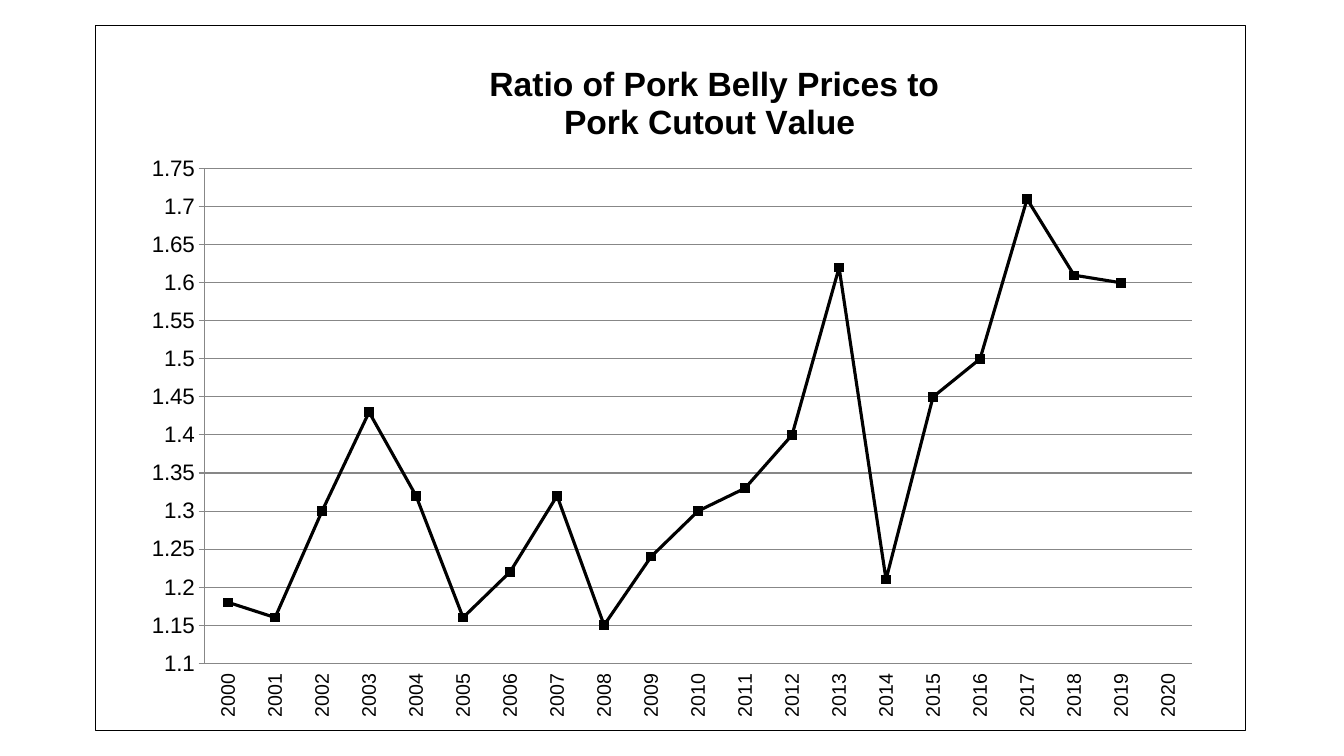
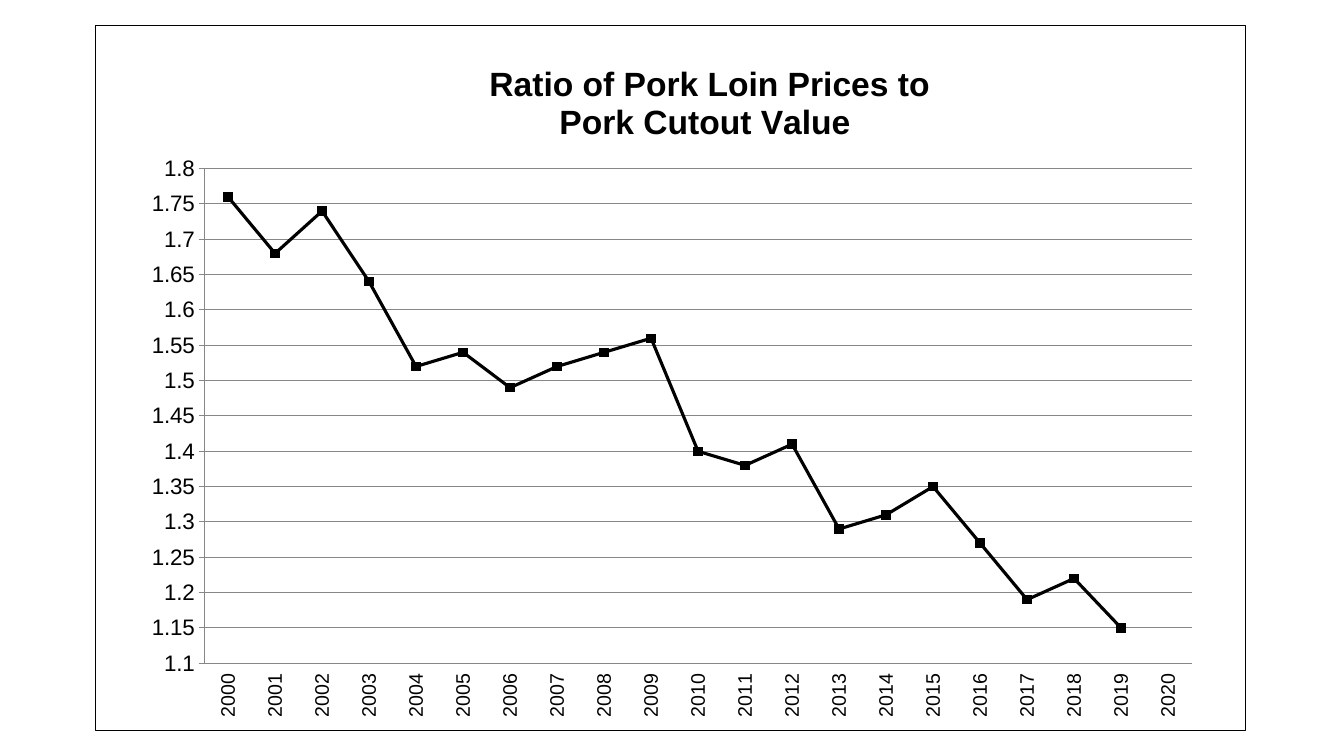
import pptx
import pptx.chart.data
import pptx.dml.color
import pptx.enum.chart
import pptx.oxml
import pptx.oxml.ns
import pptx.util

Inches = pptx.util.Inches
Pt = pptx.util.Pt
qn = pptx.oxml.ns.qn
enum = pptx.enum.chart

YEARS = [str(year) for year in range(2000, 2021)]
CHARTS = [
    ("Belly", 1.75, [1.18, 1.16, 1.3, 1.43, 1.32, 1.16, 1.22, 1.32, 1.15, 1.24, 1.3,
                     1.33, 1.4, 1.62, 1.21, 1.45, 1.5, 1.71, 1.61, 1.6, None]),
    ("Loin", 1.8, [1.76, 1.68, 1.74, 1.64, 1.52, 1.54, 1.49, 1.52, 1.54, 1.56, 1.4,
                   1.38, 1.41, 1.29, 1.31, 1.35, 1.27, 1.19, 1.22, 1.15, None]),
]


def color(code):
    return pptx.dml.color.RGBColor.from_string(code)


def apply(item, values):
    for name, value in values.items():
        setattr(item, name, value)


class Deck:
    ink = "000000"
    rule = "878787"
    face = "Arial"

    def __init__(self):
        self.file = pptx.Presentation()
        apply(self.file, {"slide_width": Inches(13.33), "slide_height": Inches(7.5)})
        self.slide = None

    def page(self):
        self.slide = self.file.slides.add_slide(self.file.slide_layouts[6])

    def font(self, font, size, bold=False):
        apply(font, {"name": self.face, "size": Pt(size), "bold": bold})
        font.color.rgb = color(self.ink)

    def line(self, line, code, width):
        line.color.rgb = color(code)
        line.width = Pt(width)

    def place(self, parent, index, spots):
        for old in parent.findall(qn("c:layout")):
            parent.remove(old)
        tags = "".join(f'<c:{tag} val="{value}"/>' for tag, value in spots.items())
        parent.insert(index, pptx.oxml.parse_xml(
            f'<c:layout {pptx.oxml.ns.nsdecls("c")}><c:manualLayout>{tags}'
            '</c:manualLayout></c:layout>'))

    def border(self, chart):
        root = chart.element
        root.find(qn("c:chart")).addnext(pptx.oxml.parse_xml(
            f'<c:spPr {pptx.oxml.ns.nsdecls("c", "a")}><a:noFill/>'
            f'<a:ln w="{Pt(0.75)}"><a:solidFill><a:srgbClr val="{self.ink}"/>'
            '</a:solidFill></a:ln></c:spPr>'))

    def title(self, chart, text):
        title = chart.chart_title
        title.text_frame.text = text
        for para in title.text_frame.paragraphs:
            self.font(para.font, 24, True)
            for run in para.runs:
                self.font(run.font, 24, True)
        title.include_in_layout = False
        self.place(title.element if hasattr(title, "element") else title._element, 1,
                   {"xMode": "edge", "yMode": "edge", "x": 0.34, "y": 0.05})

    def axes(self, chart, top):
        years, ratio = chart.category_axis, chart.value_axis
        apply(years, {"major_tick_mark": enum.XL_TICK_MARK.NONE,
                      "tick_label_position": enum.XL_TICK_LABEL_POSITION.LOW})
        apply(ratio, {"major_tick_mark": enum.XL_TICK_MARK.OUTSIDE,
                      "minimum_scale": 1.1, "maximum_scale": top,
                      "major_unit": 0.05, "has_major_gridlines": True})
        apply(ratio.tick_labels, {"number_format": "General",
                                  "number_format_is_linked": False})
        for axis, size in ((years, 14), (ratio, 16)):
            self.font(axis.tick_labels.font, size)
            self.line(axis.format.line, self.rule, 0.75)
        self.line(ratio.major_gridlines.format.line, self.rule, 0.75)
        body = years.element if hasattr(years, "element") else years._element
        body.find(qn("c:txPr")).find(qn("a:bodyPr")).set("rot", "-5400000")

    def chart(self, text, top, values):
        data = pptx.chart.data.CategoryChartData()
        data.categories = YEARS
        data.add_series("Series 1", values)
        chart = self.slide.shapes.add_chart(
            enum.XL_CHART_TYPE.LINE_MARKERS, Inches(0.94), Inches(0.25),
            Inches(11.42), Inches(7), data).chart
        apply(chart, {"has_legend": False, "has_title": True})
        self.font(chart.font, 18)
        self.border(chart)
        self.title(chart, text)
        self.axes(chart, top)
        plot = chart.plots[0]
        plot.vary_by_categories = False
        series = plot.series[0]
        series.smooth = False
        self.line(series.format.line, self.ink, 2.25)
        apply(series.marker, {"style": enum.XL_MARKER_STYLE.SQUARE, "size": 6})
        series.marker.format.fill.solid()
        series.marker.format.fill.fore_color.rgb = color(self.ink)
        self.line(series.marker.format.line, self.ink, 0.75)
        area = chart.element.find(qn("c:chart")).find(qn("c:plotArea"))
        self.place(area, 0, {"layoutTarget": "inner", "xMode": "edge", "yMode": "edge",
                             "x": 0.095, "y": 0.203, "w": 0.858, "h": 0.702})


def main():
    deck = Deck()
    for cut, top, values in CHARTS:
        deck.page()
        deck.chart(f"Ratio of Pork {cut} Prices to\nPork Cutout Value ", top, values)
    deck.file.save("out.pptx")


if __name__ == "__main__":
    main()
